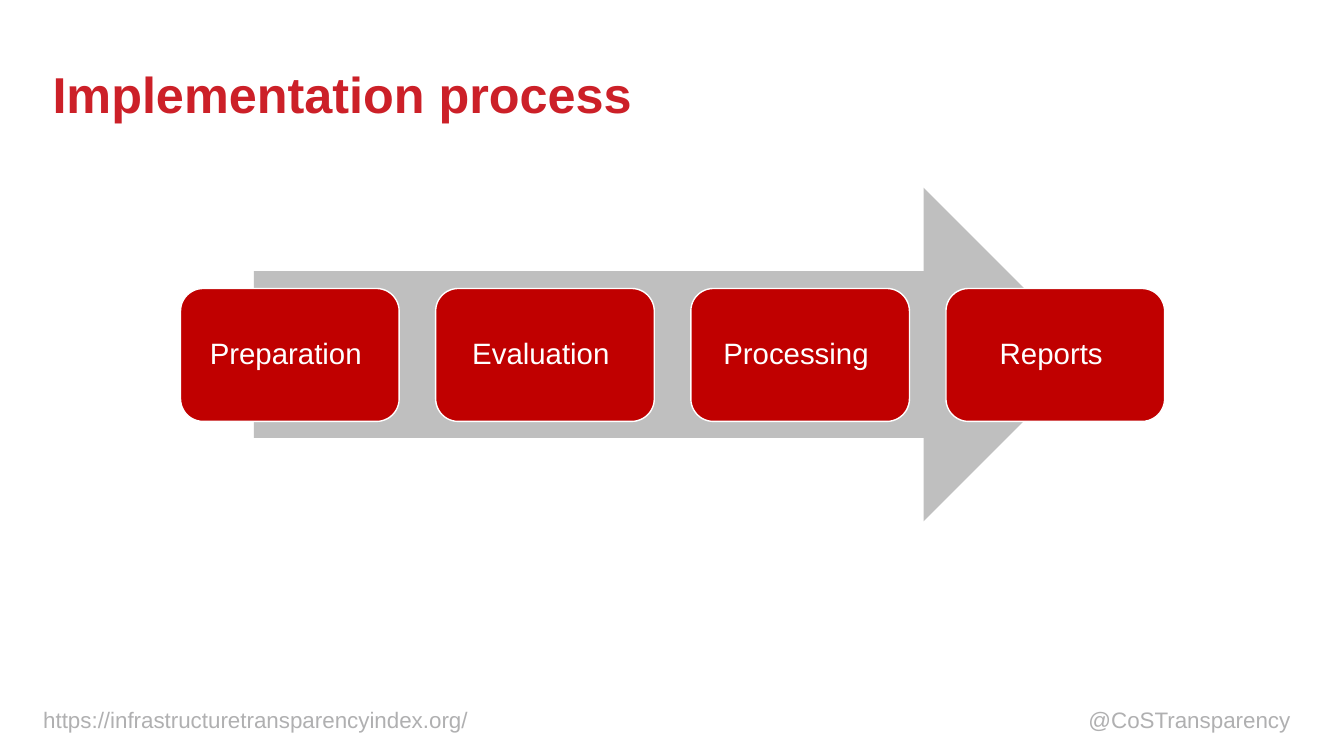
from dataclasses import dataclass

from pptx import Presentation
from pptx.dml.color import RGBColor
from pptx.enum.shapes import MSO_SHAPE as Preset
from pptx.enum.text import MSO_ANCHOR as Anchor, MSO_AUTO_SIZE as AutoSize, PP_ALIGN as Align
from pptx.shapes.autoshape import Shape
from pptx.slide import Slide
from pptx.util import Cm, Pt

TITLE_RED = RGBColor(0xCC, 0x20, 0x28)
STEP_RED = RGBColor(0xC0, 0x00, 0x00)
ARROW_GREY = RGBColor(0xBF, 0xBF, 0xBF)
FOOTER_GREY = RGBColor(0xB0, 0xB0, 0xB1)
WHITE = RGBColor(0xFF, 0xFF, 0xFF)

STEPS = ("Preparation ", "Evaluation ", "Processing ", "Reports ")
STEP_LEFT, STEP_TOP, STEP_PITCH = 4.55, 7.27, 6.43
STEP_WIDTH, STEP_HEIGHT = 5.51, 3.35


@dataclass(frozen=True)
class Box:
    left: float
    top: float
    width: float
    height: float

    def lengths(self) -> tuple[Cm, Cm, Cm, Cm]:
        return Cm(self.left), Cm(self.top), Cm(self.width), Cm(self.height)


@dataclass(frozen=True)
class Footer:
    text: str
    box: Box
    align: Align


FOOTERS = (
    Footer("https://infrastructuretransparencyindex.org/", Box(0.84, 17.68, 12.47, 1.07), Align.LEFT),
    Footer("@CoSTransparency", Box(26.09, 17.68, 6.68, 1.07), Align.RIGHT),
)


def write_text(shape: Shape, text: str, size: int, color: RGBColor, align: Align,
               anchor: Anchor, spacing: float = 1.0, bold: bool = False) -> None:
    frame = shape.text_frame
    frame.text = text
    frame.word_wrap = True
    frame.auto_size = AutoSize.NONE
    frame.vertical_anchor = anchor
    paragraph = frame.paragraphs[0]
    paragraph.alignment = align
    paragraph.line_spacing = spacing
    font = paragraph.runs[0].font
    font.name = "Arial"
    font.size = Pt(size)
    font.bold = bold
    font.color.rgb = color


def add_filled_shape(slide: Slide, preset: Preset, box: Box, fill: RGBColor) -> Shape:
    shape = slide.shapes.add_shape(preset, *box.lengths())
    shape.shadow.inherit = False
    shape.fill.solid()
    shape.fill.fore_color.rgb = fill
    shape.line.fill.background()
    return shape


def add_title(slide: Slide) -> None:
    title = slide.shapes.title
    title.left, title.top, title.width, title.height = Box(1.07, 1.24, 23.8, 2.44).lengths()
    write_text(title, "Implementation process", 36, TITLE_RED, Align.LEFT, Anchor.MIDDLE, 0.9, True)


def add_step(slide: Slide, position: int, label: str) -> None:
    box = Box(STEP_LEFT + position * STEP_PITCH, STEP_TOP, STEP_WIDTH, STEP_HEIGHT)
    step = add_filled_shape(slide, Preset.ROUNDED_RECTANGLE, box, STEP_RED)
    step.adjustments[0] = 0.17
    step.line.color.rgb = WHITE
    step.line.width = Pt(1)
    write_text(step, label, 21, WHITE, Align.CENTER, Anchor.MIDDLE, 0.9)


def add_footer(slide: Slide, footer: Footer) -> None:
    textbox = slide.shapes.add_textbox(*footer.box.lengths())
    write_text(textbox, footer.text, 16, FOOTER_GREY, footer.align, Anchor.TOP)


def main() -> None:
    presentation = Presentation()
    presentation.slide_width = Cm(33.87)
    presentation.slide_height = Cm(19.05)
    slide = presentation.slides.add_slide(presentation.slide_layouts[5])
    add_title(slide)
    for footer in FOOTERS:
        add_footer(slide, footer)
    add_filled_shape(slide, Preset.RIGHT_ARROW, Box(6.4, 4.73, 21.08, 8.41), ARROW_GREY)
    for position, label in enumerate(STEPS):
        add_step(slide, position, label)
    presentation.save("out.pptx")


if __name__ == "__main__":
    main()
